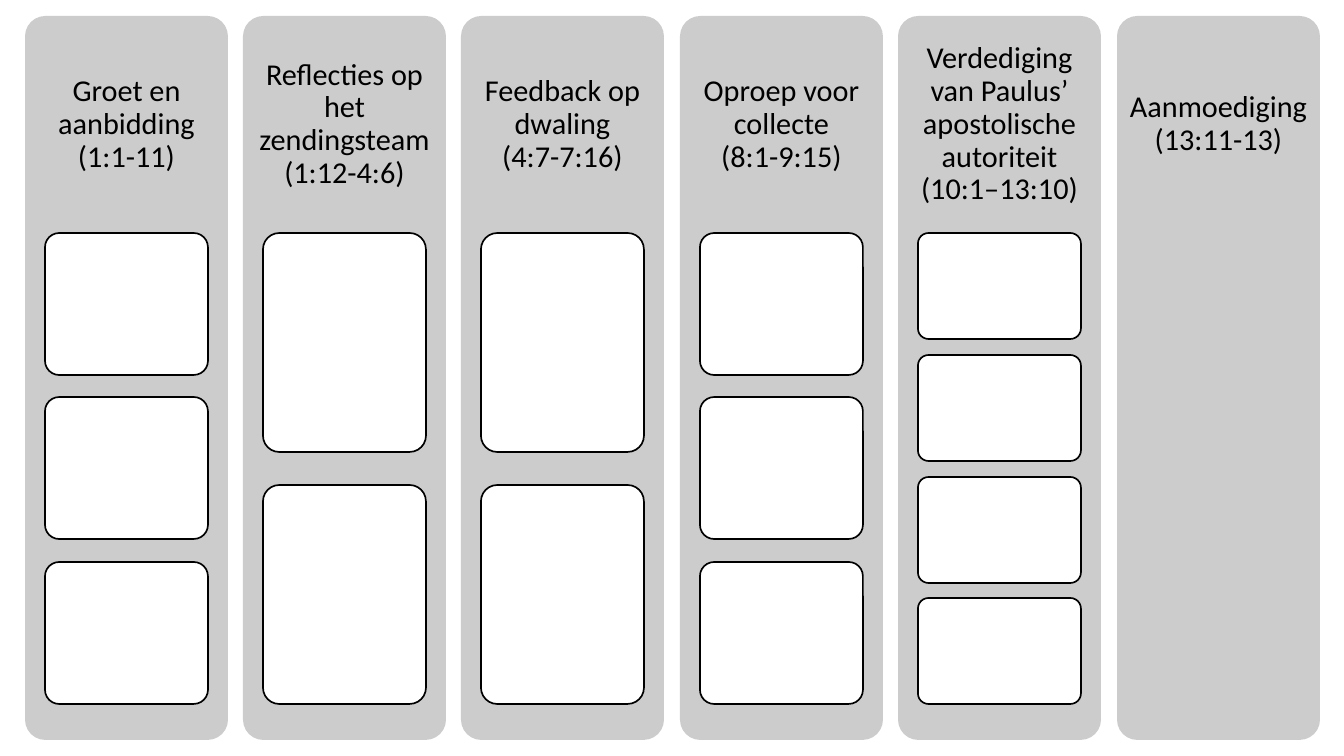
from dataclasses import dataclass

import pptx
import pptx.dml.color
import pptx.enum.shapes
import pptx.enum.text
import pptx.util

PX = 914400 / 121  # EMU in one px
SLIDE_WIDTH, SLIDE_HEIGHT = 1344, 756

# Column grid, in px
COLUMN_LEFT, COLUMN_TOP = 25, 16
COLUMN_WIDTH, COLUMN_HEIGHT = 203, 724
COLUMN_SPAN = 1092  # from the first column's left to the last one's
HEADING_HEIGHT, HEADING_INSET = 217, 8
BOX_INDENT, BOX_WIDTH = 20, 163
BOXES_TOP, BOXES_HEIGHT = 233, 471
GAP_RATIO = 2 / 13  # gap between boxes, as a share of box height

# Heading, verses, number of empty boxes
SECTIONS = [
    ("Groet en aanbidding", "(1:1-11)", 3),
    ("Reflecties op het zendingsteam", "(1:12-4:6)", 2),
    ("Feedback op dwaling", "(4:7-7:16)", 2),
    ("Oproep voor collecte", "(8:1-9:15)", 3),
    ("Verdediging van Paulus’ apostolische autoriteit", "(10:1–13:10)", 4),
    ("Aanmoediging", "(13:11-13)", 0),
]


@dataclass(frozen=True)
class Theme:
    font: str = "Calibri"
    heading_size: int = 18
    line_width: int = 1
    corner: float = 0.1
    text: str = "000000"
    column: str = "CCCCCC"
    box: str = "FFFFFF"
    outline: str = "000000"


THEME = Theme()


def emu(px):
    return pptx.util.Emu(round(px * PX))


def rgb(value):
    return pptx.dml.color.RGBColor.from_string(value)


def add_panel(slide, left, top, width, height, fill, outline=None):
    shape = slide.shapes.add_shape(
        pptx.enum.shapes.MSO_SHAPE.ROUNDED_RECTANGLE,
        emu(left), emu(top), emu(width), emu(height))
    shape.adjustments[0] = THEME.corner
    shape.shadow.inherit = False
    shape.fill.solid()
    shape.fill.fore_color.rgb = rgb(fill)
    if outline:
        shape.line.color.rgb = rgb(outline)
        shape.line.width = pptx.util.Pt(THEME.line_width)
    else:
        shape.line.fill.background()


def add_run(paragraph, text):
    run = paragraph.add_run()
    run.text = text
    run.font.name = THEME.font
    run.font.size = pptx.util.Pt(THEME.heading_size)
    run.font.color.rgb = rgb(THEME.text)


def add_heading(slide, left, title, verses):
    shape = slide.shapes.add_textbox(
        emu(left), emu(COLUMN_TOP), emu(COLUMN_WIDTH), emu(HEADING_HEIGHT))
    frame = shape.text_frame
    frame.word_wrap = True
    frame.vertical_anchor = pptx.enum.text.MSO_ANCHOR.MIDDLE
    frame.margin_left = frame.margin_right = emu(HEADING_INSET)
    frame.margin_top = frame.margin_bottom = emu(HEADING_INSET)
    paragraph = frame.paragraphs[0]
    paragraph.alignment = pptx.enum.text.PP_ALIGN.CENTER
    paragraph.line_spacing = 0.9
    add_run(paragraph, title)
    paragraph.add_line_break()
    add_run(paragraph, verses)


def add_boxes(slide, left, count):
    """Stack equal boxes so that they fill the area under the heading."""
    if not count:
        return
    height = BOXES_HEIGHT / (count + (count - 1) * GAP_RATIO)
    pitch = height * (1 + GAP_RATIO)
    for row in range(count):
        add_panel(slide, left, round(BOXES_TOP + row * pitch), BOX_WIDTH,
                  round(height), THEME.box, THEME.outline)


def main():
    presentation = pptx.Presentation()
    presentation.slide_width = emu(SLIDE_WIDTH)
    presentation.slide_height = emu(SLIDE_HEIGHT)
    slide = presentation.slides.add_slide(presentation.slide_layouts[6])

    # One column per section of the letter
    for index, (title, verses, count) in enumerate(SECTIONS):
        left = COLUMN_LEFT + index * COLUMN_SPAN // (len(SECTIONS) - 1)
        add_panel(slide, left, COLUMN_TOP, COLUMN_WIDTH, COLUMN_HEIGHT,
                  THEME.column)
        add_heading(slide, left, title, verses)
        add_boxes(slide, left + BOX_INDENT, count)

    presentation.save("out.pptx")


if __name__ == "__main__":
    main()
